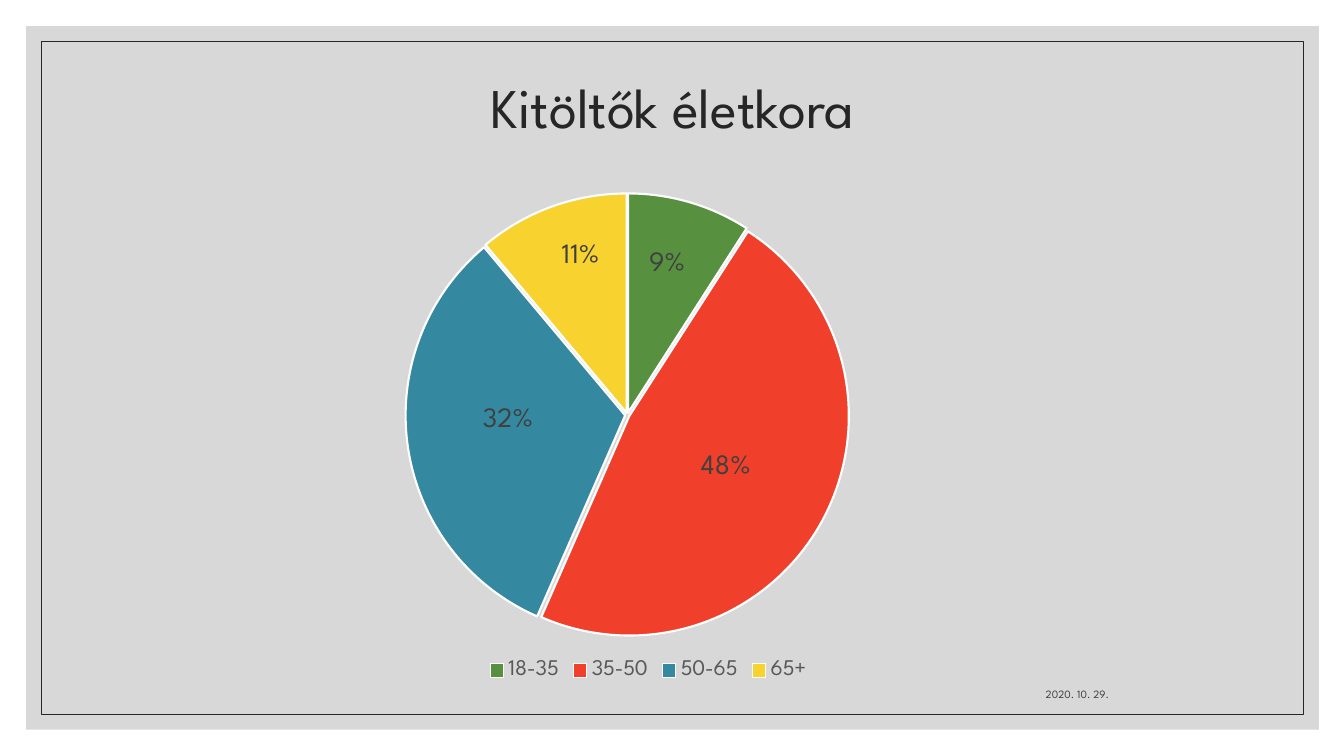
from pptx import Presentation
from pptx.chart.data import CategoryChartData
from pptx.dml.color import RGBColor
from pptx.enum.chart import XL_CHART_TYPE, XL_LABEL_POSITION, XL_LEGEND_POSITION
from pptx.enum.shapes import MSO_SHAPE
from pptx.enum.text import MSO_ANCHOR, PP_ALIGN
from pptx.oxml import parse_xml
from pptx.oxml.ns import nsdecls
from pptx.util import Pt

RECTANGLE = MSO_SHAPE.RECTANGLE
PIE = XL_CHART_TYPE.PIE
LABEL_CENTER = XL_LABEL_POSITION.CENTER
LEGEND_BOTTOM = XL_LEGEND_POSITION.BOTTOM
MIDDLE, BOTTOM = MSO_ANCHOR.MIDDLE, MSO_ANCHOR.BOTTOM
CENTER, RIGHT = PP_ALIGN.CENTER, PP_ALIGN.RIGHT

PX = 9144
THEME = {
    "font": "League Spartan",
    "panel": "BFBFBF",
    "frame": "262626",
    "slice_line": "FFFFFF",
    "title": (40, "262626"),
    "date": (8, "404040"),
    "legend": (16, "595959"),
    "label": (20, "404040"),
}


def style_font(font, role):
    size, color = THEME[role]
    for name, value in {"name": THEME["font"], "size": Pt(size), "bold": False}.items():
        setattr(font, name, value)
    font.color.rgb = RGBColor.from_string(color)


def layout_xml(inner, **values):
    target = '<c:layoutTarget val="inner"/><c:xMode val="edge"/><c:yMode val="edge"/>' if inner else ""
    parts = "".join(f'<c:{name} val="{value}"/>' for name, value in values.items())
    return parse_xml(
        f'<c:layout {nsdecls("c")}><c:manualLayout>{target}{parts}</c:manualLayout></c:layout>'
    )


deck = Presentation()
deck.slide_width, deck.slide_height = 1333 * PX, 750 * PX
page = deck.slides.add_slide(deck.slide_layouts[6])

panel = page.shapes.add_shape(RECTANGLE, 26 * PX, 26 * PX, 1282 * PX, 698 * PX)
panel.shadow.inherit = False
panel.fill.solid()
panel.fill.fore_color.rgb = RGBColor.from_string(THEME["panel"])
panel.line.fill.background()
panel_color = panel.fill._xPr.find(".//{*}srgbClr")
panel_color.append(parse_xml(f'<a:alpha {nsdecls("a")} val="60000"/>'))

frame = page.shapes.add_shape(RECTANGLE, 41 * PX, 41 * PX, 1252 * PX, 668 * PX)
frame.shadow.inherit = False
frame.fill.background()
frame.line.color.rgb = RGBColor.from_string(THEME["frame"])
frame.line.width = Pt(0.5)

texts = [
    ("Kitöltők életkora", "title", (117, 70, 1100, 79), MIDDLE, CENTER, 0.9),
    ("2020. 10. 29.", "date", (794, 660, 316, 40), BOTTOM, RIGHT, 1.0),
]
for words, role, place, anchor, alignment, spacing in texts:
    box = page.shapes.add_textbox(*(length * PX for length in place))
    box.text_frame.word_wrap = True
    box.text_frame.vertical_anchor = anchor
    para = box.text_frame.paragraphs[0]
    para.alignment = alignment
    para.line_spacing = spacing
    span = para.add_run()
    span.text = words
    style_font(span.font, role)

age_groups = [
    ("18-35", 0.09, "57903F", (0.01, -0.08)),
    ("35-50", 0.47, "F03F2B", (0, 0)),
    ("50-65", 0.32, "3488A0", (-0.01, -0.02)),
    ("65+", 0.11, "F8D22F", (-0.01, -0.1)),
]
ages = CategoryChartData(number_format="0%")
ages.categories = [group[0] for group in age_groups]
ages.add_series("Series 1", [group[1] for group in age_groups])
chart = page.shapes.add_chart(PIE, 228 * PX, 149 * PX, 830 * PX, 531 * PX, ages).chart
chart.has_title = False
chart.font.name = THEME["font"]
chart.font.size = Pt(10)
chart.has_legend = True
chart.legend.position = LEGEND_BOTTOM
chart.legend.include_in_layout = False
style_font(chart.legend.font, "legend")

plot = chart.plots[0]
plot.vary_by_categories = True
series = plot.series[0]
labels = series.data_labels
label_format = {
    "show_value": True,
    "show_percentage": False,
    "number_format": "0%",
    "number_format_is_linked": False,
    "position": LABEL_CENTER,
}
for name, value in label_format.items():
    setattr(labels, name, value)
style_font(labels.font, "label")

for index, (_, _, color, _) in enumerate(age_groups):
    point = series.points[index]
    point.format.fill.solid()
    point.format.fill.fore_color.rgb = RGBColor.from_string(color)
    point.format.line.color.rgb = RGBColor.from_string(THEME["slice_line"])
    point.format.line.width = Pt(1.5)
    style_font(point.data_label.font, "label")
    point.data_label.position = LABEL_CENTER

rounded_label = series.points[1].data_label.text_frame.paragraphs[0].add_run()
rounded_label.text = "48%"
style_font(rounded_label.font, "label")

for label, (_, _, _, (x, y)) in zip(chart.element.xpath(".//c:dLbl"), age_groups):
    label.find("{*}idx").addnext(layout_xml(False, x=x, y=y))

series_name = chart.element.xpath(".//c:ser/c:tx")[0]
series_name.addnext(parse_xml(f'<c:explosion {nsdecls("c")} val="1"/>'))

plot_area = chart.element.xpath(".//c:plotArea")[0]
for layout in plot_area.xpath("./c:layout"):
    plot_area.remove(layout)
plot_area.insert(0, layout_xml(True, x=0.21, y=0.04, w=0.53, h=0.91))

deck.save("out.pptx")
